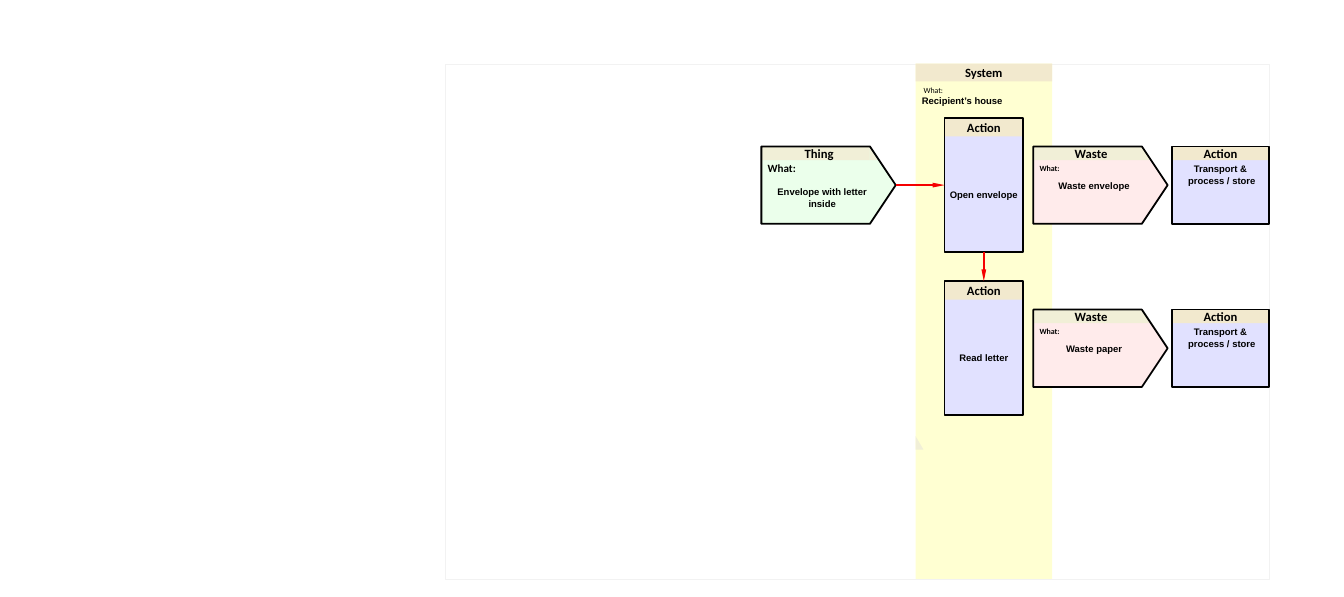
from lxml.etree import SubElement
from pptx import Presentation
from pptx.dml.color import RGBColor
from pptx.enum.shapes import MSO_CONNECTOR, MSO_SHAPE
from pptx.enum.text import MSO_ANCHOR, PP_ALIGN
from pptx.oxml.ns import qn
from pptx.util import Pt

COLORS = {
    "frame": "F2F2F2", "system": "FFFFD2", "header": "F2E9CE", "tab": "F1EFD7",
    "action": "E1E1FF", "waste": "FFEBEB", "thing": "EBFFEB",
    "black": "000000", "flow": "F50000",
}
TOP, HEIGHT = 80.64, 652.32
SYSTEM_X, SYSTEM_W = 1158.48, 172.8
ROW_1, ROW_PITCH = 234.4, 206.64  # vertical centre of the first row, row distance
THING_X, ACTION_X, WASTE_X, STORE_X = 963.4, 1195.2, 1307.5, 1483.2
ARROW_W, ARROW_H, TAB_W, TAB_H = 170, 98, 136.8, 17.3
ACTION_W, ACTION_H, ACTION_HEAD = 99.4, 170, 22.3
STORE_W = 122.4


def rgb(name):
    return RGBColor.from_string(COLORS[name])


def add_shape(s, kind, x, y, w, h, fill=None, line=None, width=2.25):
    sp = s.shapes.add_shape(kind, Pt(x), Pt(y), Pt(w), Pt(h))
    sp.shadow.inherit = False
    if fill:
        sp.fill.solid()
        sp.fill.fore_color.rgb = rgb(fill)
    else:
        sp.fill.background()
    if line:
        sp.line.color.rgb = rgb(line)
        sp.line.width = Pt(width)
    else:
        sp.line.fill.background()
    if kind == MSO_SHAPE.RIGHT_ARROW:
        sp.adjustments[0], sp.adjustments[1] = 1, 0.333
    return sp


def add_rect(s, *args, **kwargs):
    return add_shape(s, MSO_SHAPE.RECTANGLE, *args, **kwargs)


def write(sp, lines, size=12, font="Arial", bold=True, align=PP_ALIGN.CENTER,
          anchor=MSO_ANCHOR.MIDDLE, left=0, right=0):
    tf = sp.text_frame
    tf.word_wrap = True
    tf.vertical_anchor = anchor
    tf.margin_left, tf.margin_right = Pt(left), Pt(right)
    tf.margin_top = tf.margin_bottom = 0
    for i, line in enumerate(lines):
        p = tf.paragraphs[0] if i == 0 else tf.add_paragraph()
        p.alignment = align
        r = p.add_run()
        r.text = line
        r.font.name, r.font.size, r.font.bold = font, Pt(size), bold
        r.font.color.rgb = rgb("black")


def add_text(s, x, y, w, h, lines, **style):
    write(s.shapes.add_textbox(Pt(x), Pt(y), Pt(w), Pt(h)), lines, **style)


def add_header(s, x, y, w, h, title, fill="header", left=0):
    write(add_rect(s, x, y, w, h, fill), [title], size=16, font="Calibri", left=left)


def add_corner(s, x, y):
    add_shape(s, MSO_SHAPE.RIGHT_TRIANGLE, x, y, 10.1, TAB_H, "tab")


def add_system(s, title, what):
    add_rect(s, SYSTEM_X, TOP, SYSTEM_W, HEIGHT, "system")
    add_header(s, SYSTEM_X, TOP, SYSTEM_W, ACTION_HEAD, title)
    add_text(s, 1168.6, 107.3, 100, 13, ["What:"], size=10, font="Calibri",
             bold=False, align=PP_ALIGN.LEFT)
    add_text(s, 1166.4, 120.2, 178.6, 14.4, [what], align=PP_ALIGN.LEFT,
             anchor=MSO_ANCHOR.TOP)
    add_corner(s, SYSTEM_X, 552.2)


def add_action(s, center, text):
    y = center - ACTION_H / 2
    add_rect(s, ACTION_X, y, ACTION_W, ACTION_H, "action")
    add_header(s, ACTION_X, y + 1, ACTION_W, ACTION_HEAD, "Action")
    outline = add_rect(s, ACTION_X, y, ACTION_W, ACTION_H, line="black")
    add_text(s, ACTION_X, y + 23.4, ACTION_W, 147, [text], left=5, right=5)
    return outline


def add_arrow_box(s, x, center, title, text, fill, what_size, text_h):
    y = center - ARROW_H / 2
    box = (MSO_SHAPE.RIGHT_ARROW, x, y, ARROW_W, ARROW_H)
    add_shape(s, *box, fill=fill)
    add_corner(s, x + TAB_W, y)
    add_header(s, x, y, TAB_W, TAB_H, title, fill="tab", left=9.4)
    outline = add_shape(s, *box, line="black")
    add_text(s, x + 7.9, y + 20, 60, 14.4, ["What:"], size=what_size,
             font="Calibri", align=PP_ALIGN.LEFT)
    add_text(s, x + 0.7, y + 30.7, 152.6, text_h, [text], left=5.8, right=5.8)
    return outline


def add_store(s, center):
    y = center - ARROW_H / 2
    add_rect(s, STORE_X, y, STORE_W, ARROW_H, "action")
    add_header(s, STORE_X, y, STORE_W, TAB_H, "Action")
    add_rect(s, STORE_X, y, STORE_W, ARROW_H, line="black")
    add_text(s, STORE_X, y + 21.3, STORE_W, 28.8,
             ["Transport &", " process / store"], anchor=MSO_ANCHOR.TOP)


def add_flow(s, start, start_site, end, end_site):
    c = s.shapes.add_connector(MSO_CONNECTOR.STRAIGHT, 0, 0, 0, 0)
    c.begin_connect(start, start_site)
    c.end_connect(end, end_site)
    c.line.color.rgb = rgb("flow")
    c.line.width = Pt(3)
    ln = c.line._get_or_add_ln()
    SubElement(ln, qn("a:tailEnd"), type="triangle", w="sm", len="lg")
    SubElement(c._element.spPr, qn("a:effectLst"))


def main():
    prs = Presentation()
    prs.slide_width, prs.slide_height = Pt(1700.64), Pt(756)
    s = prs.slides.add_slide(prs.slide_layouts[6])

    # Frame and system column
    add_rect(s, 563, TOP, 1042.6, HEIGHT, line="frame", width=0.25)
    add_system(s, "System", "Recipient’s house")

    # Incoming thing
    thing = add_arrow_box(s, THING_X, ROW_1, "Thing", "Envelope with letter inside",
                          "thing", 14, 69)

    # One row per action, with its waste and disposal
    actions = []
    rows = [("Open envelope", "Waste envelope"), ("Read letter", "Waste paper")]
    for i, (action, waste) in enumerate(rows):
        center = ROW_1 + i * ROW_PITCH
        actions.append(add_action(s, center, action))
        add_store(s, center)
        add_arrow_box(s, WASTE_X, center, "Waste", waste, "waste", 10, 38.9)

    # Flow
    add_flow(s, actions[0], 2, actions[1], 0)
    add_flow(s, thing, 3, actions[0], 1)

    prs.save("out.pptx")


if __name__ == "__main__":
    main()
